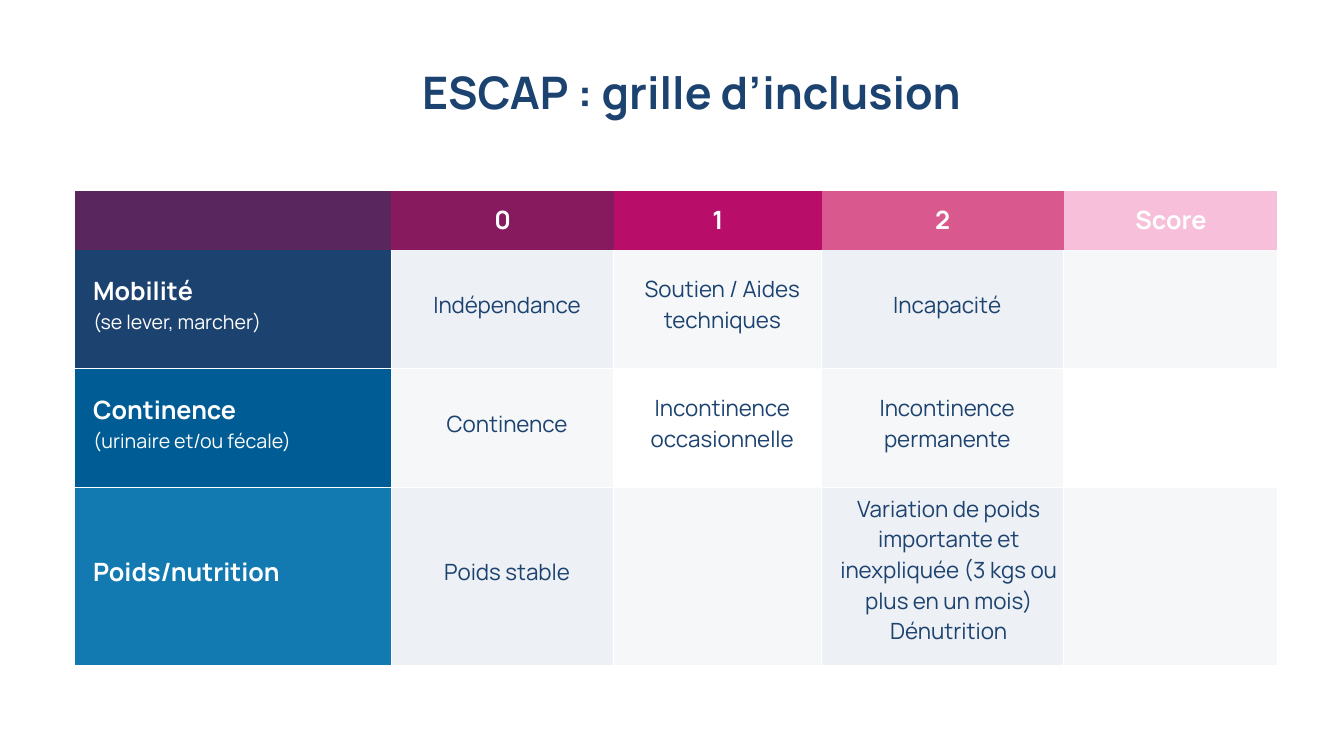
from pptx import Presentation
from pptx.dml.color import RGBColor
from pptx.enum.text import MSO_ANCHOR as ANCHOR, MSO_AUTO_SIZE as AUTO, PP_ALIGN as ALIGN
from pptx.oxml import parse_xml
from pptx.oxml.ns import nsdecls
from pptx.util import Pt

FONT = "Manrope"
WHITE = RGBColor(0xFF, 0xFF, 0xFF)
NAVY = RGBColor(0x1C, 0x42, 0x70)
PALE = RGBColor(0xF6, 0xF7, 0xF9)
GREY = RGBColor(0xED, 0xF0, 0xF4)
HEADER_FILLS = [RGBColor(0x59, 0x26, 0x5E), RGBColor(0x87, 0x1A, 0x5E),
                RGBColor(0xB8, 0x0D, 0x69), RGBColor(0xD9, 0x59, 0x8F),
                RGBColor(0xF7, 0xBF, 0xD9)]
LABEL_FILLS = [NAVY, RGBColor(0x00, 0x5C, 0x94), RGBColor(0x12, 0x7A, 0xB0)]
BODY_FILLS = [[GREY, PALE, GREY, PALE], [PALE, WHITE, PALE, WHITE]]
NO_STYLE = "{2D5ABB26-0587-4C30-8999-92F81FD0307C}"

# Content
TITLE = "ESCAP : grille d’inclusion"
ROWS = [
    ["", "0", "1", "2", "Score"],
    ["Mobilité\n(se lever, marcher)", "Indépendance",
     "Soutien / Aides techniques", "Incapacité", ""],
    ["Continence\n(urinaire et/ou fécale)", "Continence",
     "Incontinence occasionnelle", "Incontinence permanente", ""],
    ["Poids/nutrition", "Poids stable", "",
     "Variation de poids importante et inexpliquée (3 kgs ou plus en un mois)\n"
     "Dénutrition", ""],
]
COL_WIDTHS = [226, 159, 148.5, 172.8, 153.4]
ROW_HEIGHTS = [42, 85, 85, 126]
LEFT, TOP = 53.5, 136.3


def add_borders(cell, row, col):
    """White lines between body cells, thicker at the right edge."""
    last_row, last_col = len(ROWS) - 1, len(COL_WIDTHS) - 1
    widths = {
        "L": 1 if row and col else 0,
        "R": 3 if col == last_col else 1 if row else 0,
        "T": 1 if row > 1 else 0,
        "B": 1 if 0 < row < last_row else 0,
    }
    for side, width in widths.items():
        if width:
            cell._tc.get_or_add_tcPr().append(parse_xml(
                f'<a:ln{side} {nsdecls("a")} w="{Pt(width)}"><a:solidFill>'
                f'<a:srgbClr val="{WHITE}"/></a:solidFill></a:ln{side}>'))


def cell_look(row, col, line):
    """Fill, size, bold, text colour and alignment of one line."""
    if row == 0:
        return HEADER_FILLS[col], 18, True, WHITE, ALIGN.CENTER
    if col == 0:
        return LABEL_FILLS[row - 1], 14 if line else 18, line == 0, WHITE, ALIGN.LEFT
    return BODY_FILLS[(row - 1) % 2][col - 1], 16, False, NAVY, ALIGN.CENTER


def set_margins(cell, row, text):
    if row == 0:
        return
    near = Pt(4.3) if len(text) > 60 else Pt(6.5)
    cell.margin_left = cell.margin_bottom = Pt(13)
    cell.margin_top = cell.margin_right = near


def style_run(r, size, bold, color):
    r.font.name = FONT
    r.font.size = Pt(size)
    r.font.bold = bold
    r.font.color.rgb = color


prs = Presentation()
prs.slide_width, prs.slide_height = Pt(960), Pt(540)
slide = prs.slides.add_slide(prs.slide_layouts[5])

# Title
title = slide.shapes.title
title.left, title.top, title.width, title.height = Pt(91.4), Pt(41), Pt(805.7), Pt(44)
tf = title.text_frame
tf.text = TITLE
tf.auto_size = AUTO.NONE
tf.vertical_anchor = ANCHOR.BOTTOM
tf.margin_top = tf.margin_bottom = 0
p = tf.paragraphs[0]
p.alignment = ALIGN.CENTER
style_run(p.runs[0], 32, True, NAVY)

# Scoring table
frame = slide.shapes.add_table(len(ROWS), len(COL_WIDTHS), Pt(LEFT), Pt(TOP),
                               Pt(sum(COL_WIDTHS)), Pt(sum(ROW_HEIGHTS)))
table = frame.table
table._tbl.tblPr[0].text = NO_STYLE
table.horz_banding = False
for column, width in zip(table.columns, COL_WIDTHS):
    column.width = Pt(width)
for table_row, height in zip(table.rows, ROW_HEIGHTS):
    table_row.height = Pt(height)

for row, texts in enumerate(ROWS):
    for col, text in enumerate(texts):
        cell = table.cell(row, col)
        add_borders(cell, row, col)
        cell.fill.solid()
        cell.fill.fore_color.rgb = cell_look(row, col, 0)[0]
        cell.vertical_anchor = ANCHOR.MIDDLE
        set_margins(cell, row, text)
        cell.text_frame.text = text
        for line, p in enumerate(cell.text_frame.paragraphs):
            _, size, bold, color, p.alignment = cell_look(row, col, line)
            for r in p.runs:
                style_run(r, size, bold, color)

prs.save("out.pptx")
